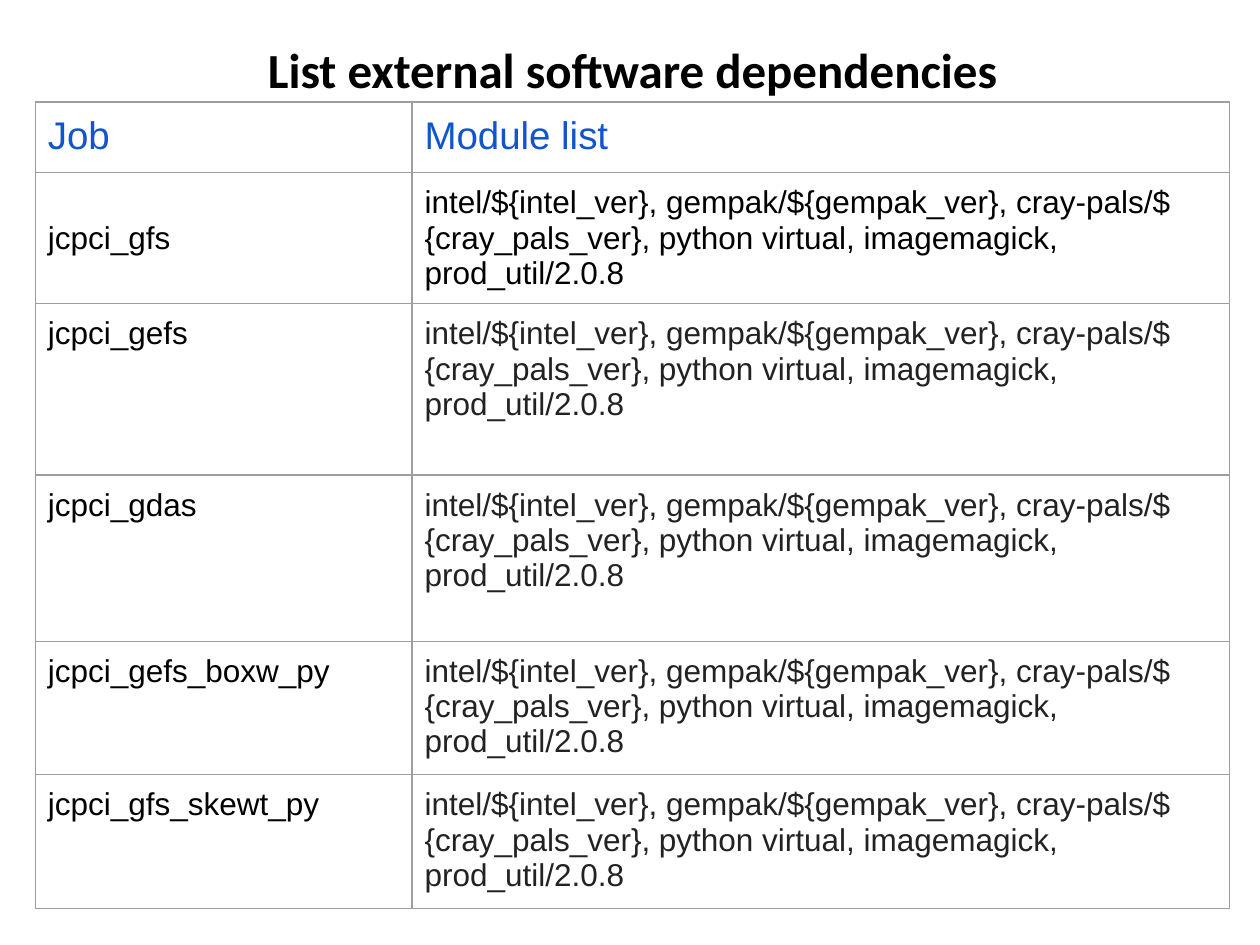
from dataclasses import dataclass

from lxml.etree import SubElement
from pptx import Presentation
from pptx.dml.color import RGBColor
from pptx.enum.text import MSO_ANCHOR, PP_ALIGN
from pptx.oxml.ns import qn
from pptx.util import Inches, Pt


@dataclass(frozen=True)
class Theme:
    title_font: str = "Calibri"
    body_font: str = "Arial"
    title_size: int = 28
    header_size: int = 22
    body_size: int = 18
    ink: str = "000000"
    soft_ink: str = "222222"
    header: str = "1155CC"
    border: str = "9E9E9E"
    border_width: float = 0.75


MODULES = (
    "intel/${intel_ver}, gempak/${gempak_ver}, cray-pals/${cray_pals_ver}, "
    "python virtual, imagemagick, prod_util/2.0.8"
)
JOBS = ["jcpci_gfs", "jcpci_gefs", "jcpci_gdas", "jcpci_gefs_boxw_py", "jcpci_gfs_skewt_py"]
COLUMN_WIDTHS = [2.99, 6.49]
ROW_HEIGHTS = [0.56, 1.04, 1.36, 1.32, 1.06, 1.06]


class SlideBuilder:
    def __init__(self, page, theme):
        self.page = page
        self.theme = theme

    def style(self, paragraph, font, size, color, bold=False):
        for span in paragraph.runs:
            span.font.name = font
            span.font.size = Pt(size)
            span.font.bold = bold
            span.font.color.rgb = RGBColor.from_string(color)

    def title(self, text, left, top, width, height):
        box = self.page.shapes.title
        box.left, box.top = Inches(left), Inches(top)
        box.width, box.height = Inches(width), Inches(height)
        frame = box.text_frame
        frame.text = text
        frame.vertical_anchor = MSO_ANCHOR.MIDDLE
        paragraph = frame.paragraphs[0]
        paragraph.alignment = PP_ALIGN.CENTER
        self.style(paragraph, self.theme.title_font, self.theme.title_size,
                   self.theme.ink, bold=True)

    def table(self, left, top, widths, heights):
        frame = self.page.shapes.add_table(
            len(heights), len(widths), Inches(left), Inches(top),
            Inches(sum(widths)), Inches(sum(heights)))
        table = frame.table
        table.first_row = table.horz_banding = False
        for column, width in zip(table.columns, widths):
            column.width = Inches(width)
        for row, height in zip(table.rows, heights):
            row.height = Inches(height)
        return table

    def cell(self, cell, text, size, color):
        cell.text_frame.text = text
        self.style(cell.text_frame.paragraphs[0], self.theme.body_font, size, color)
        cell.margin_left = cell.margin_right = Inches(0.1)
        cell.margin_top = cell.margin_bottom = Inches(0.1)
        self.borders(cell)
        cell.fill.background()

    def borders(self, cell):
        properties = cell._tc.get_or_add_tcPr()
        for side in ("a:lnL", "a:lnR", "a:lnT", "a:lnB"):
            line = SubElement(properties, qn(side), w=str(Pt(self.theme.border_width)))
            fill = SubElement(line, qn("a:solidFill"))
            SubElement(fill, qn("a:srgbClr"), val=self.theme.border)


def main():
    deck = Presentation()
    deck.slide_width, deck.slide_height = Inches(10), Inches(7.5)
    theme = Theme()
    builder = SlideBuilder(deck.slides.add_slide(deck.slide_layouts[5]), theme)

    # Title
    builder.title("List external software dependencies", 0.08, 0.17, 9.88, 0.76)

    # Header row
    table = builder.table(0.28, 0.81, COLUMN_WIDTHS, ROW_HEIGHTS)
    for column, heading in enumerate(["Job", "Module list"]):
        builder.cell(table.cell(0, column), heading, theme.header_size, theme.header)

    # One row per job, all with the same modules
    for row, job in enumerate(JOBS, start=1):
        modules_color = theme.ink if row == 1 else theme.soft_ink
        builder.cell(table.cell(row, 0), job, theme.body_size, theme.ink)
        builder.cell(table.cell(row, 1), MODULES, theme.body_size, modules_color)
    table.cell(1, 0).vertical_anchor = MSO_ANCHOR.MIDDLE

    deck.save("out.pptx")


if __name__ == "__main__":
    main()
